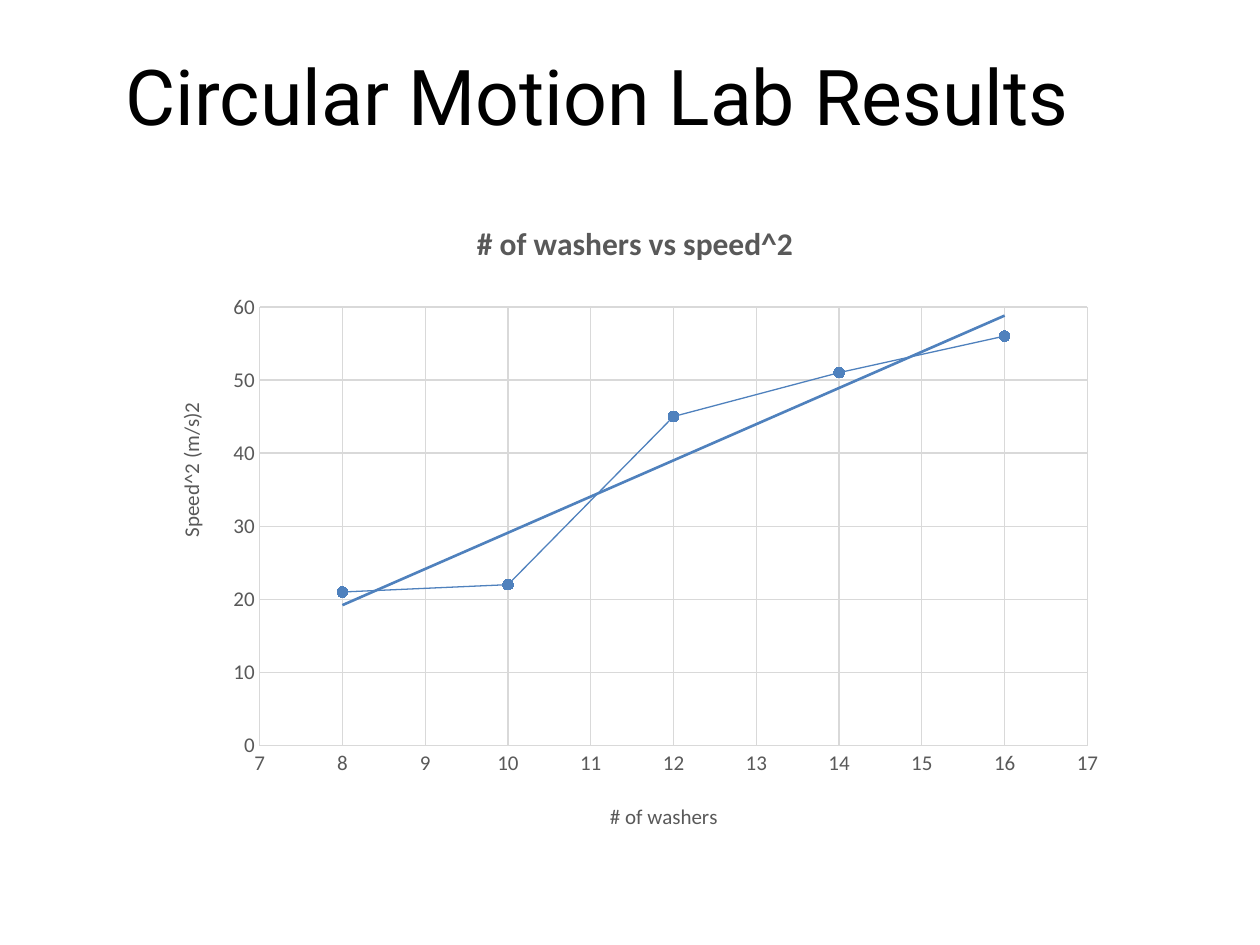
from lxml import etree
from pptx import Presentation
from pptx.chart.data import XyChartData
from pptx.dml.color import RGBColor
from pptx.enum.chart import XL_CHART_TYPE, XL_MARKER_STYLE, XL_TICK_MARK
from pptx.enum.text import MSO_ANCHOR, PP_ALIGN
from pptx.oxml.ns import qn
from pptx.util import Inches, Pt

SMOOTH_SCATTER = XL_CHART_TYPE.XY_SCATTER_SMOOTH
CIRCLE = XL_MARKER_STYLE.CIRCLE
NO_TICK = XL_TICK_MARK.NONE
MIDDLE = MSO_ANCHOR.MIDDLE
LEFT = PP_ALIGN.LEFT

BLACK = RGBColor(0x00, 0x00, 0x00)
GRAY = RGBColor(0x59, 0x59, 0x59)
GRID = RGBColor(0xD9, 0xD9, 0xD9)
BLUE = RGBColor(0x4F, 0x81, 0xBD)

WIDTH, HEIGHT = Inches(10), Inches(7.5)
WASHERS = [8, 10, 12, 14, 16]
SPEEDS_SQUARED = [21, 22, 45, 51, 56]


def share(left, top, width, height):
    return (int(WIDTH * left), int(HEIGHT * top),
            int(WIDTH * width), int(HEIGHT * height))


def style_font(font, size, color, name="Calibri", bold=False):
    font.size = Pt(size)
    font.name = name
    font.bold = bold
    font.color.rgb = color


def add_heading(page, text):
    box = page.shapes.add_textbox(*share(0.09, 0.06, 0.9, 0.08))
    frame = box.text_frame
    frame.word_wrap = True
    frame.vertical_anchor = MIDDLE
    para = frame.paragraphs[0]
    para.text = text
    para.alignment = LEFT
    style_font(para.font, 44, BLACK, "Roboto")


def add_values(parent, **values):
    for tag, value in values.items():
        etree.SubElement(parent, qn(f"c:{tag}")).set("val", str(value))


def place(element, index, **position):
    for old in element.findall(qn("c:layout")):
        element.remove(old)
    layout = etree.Element(qn("c:layout"))
    manual = etree.SubElement(layout, qn("c:manualLayout"))
    add_values(manual, **position)
    element.insert(index, layout)


def write_title(title, text, size, bold=False):
    para = title.text_frame.paragraphs[0]
    para.text = text
    style_font(para.font, size, GRAY, bold=bold)


def style_axis(axis, title, low, high, step, left, top):
    axis.minimum_scale, axis.maximum_scale, axis.major_unit = low, high, step
    axis.major_tick_mark = axis.minor_tick_mark = NO_TICK
    axis.has_major_gridlines = True
    grid = axis.major_gridlines.format.line
    grid.color.rgb = GRID
    grid.width = Pt(0.75)
    axis.format.line.fill.background()
    style_font(axis.tick_labels.font, 12, GRAY)
    axis.tick_labels.number_format = "General"
    axis.tick_labels.number_format_is_linked = False
    write_title(axis.axis_title, title, 12)
    place(axis.axis_title._element, 1, xMode="edge", yMode="edge", x=left, y=top)


def add_trend_line(series):
    trend = etree.Element(qn("c:trendline"))
    shape = etree.SubElement(trend, qn("c:spPr"))
    line = etree.SubElement(shape, qn("a:ln"), w=str(Pt(1.5)))
    fill = etree.SubElement(line, qn("a:solidFill"))
    etree.SubElement(fill, qn("a:srgbClr"), val=str(BLUE))
    add_values(trend, trendlineType="linear", dispRSqr=0, dispEq=0)
    series._element.find(qn("c:xVal")).addprevious(trend)


def style_series(series):
    series.smooth = True
    series.format.line.color.rgb = BLUE
    series.format.line.width = Pt(0.75)
    marker = series.marker
    marker.style = CIRCLE
    marker.size = 6
    marker.format.fill.solid()
    marker.format.fill.fore_color.rgb = BLUE
    marker.format.line.color.rgb = BLUE
    add_trend_line(series)


def add_results_chart(page):
    data = XyChartData()
    points = data.add_series("Series 1")
    for washers, speed in zip(WASHERS, SPEEDS_SQUARED):
        points.add_data_point(washers, speed)
    frame = page.shapes.add_chart(
        SMOOTH_SCATTER, *share(0.122, 0.207, 0.764, 0.693), data)
    chart = frame.chart
    style_font(chart.font, 10, BLACK)
    chart.has_legend = False
    write_title(chart.chart_title, "# of washers vs speed^2", 18, bold=True)
    style_axis(chart.category_axis, "# of washers", 7, 17, 1, 0.47, 0.92)
    style_axis(chart.value_axis, "Speed^2 (m/s)2", 0, 60, 10, 0.02, 0.31)
    plot = chart.plots[0]
    plot.vary_by_categories = False
    style_series(plot.series[0])
    place(chart._chartSpace.find(".//" + qn("c:plotArea")), 0,
          layoutTarget="inner", xMode="edge", yMode="edge",
          x=0.11, y=0.17, w=0.86, h=0.67)


def main():
    deck = Presentation()
    deck.slide_width, deck.slide_height = WIDTH, HEIGHT
    page = deck.slides.add_slide(deck.slide_layouts[6])
    add_heading(page, "Circular Motion Lab Results")
    add_results_chart(page)
    deck.save("out.pptx")


if __name__ == "__main__":
    main()
